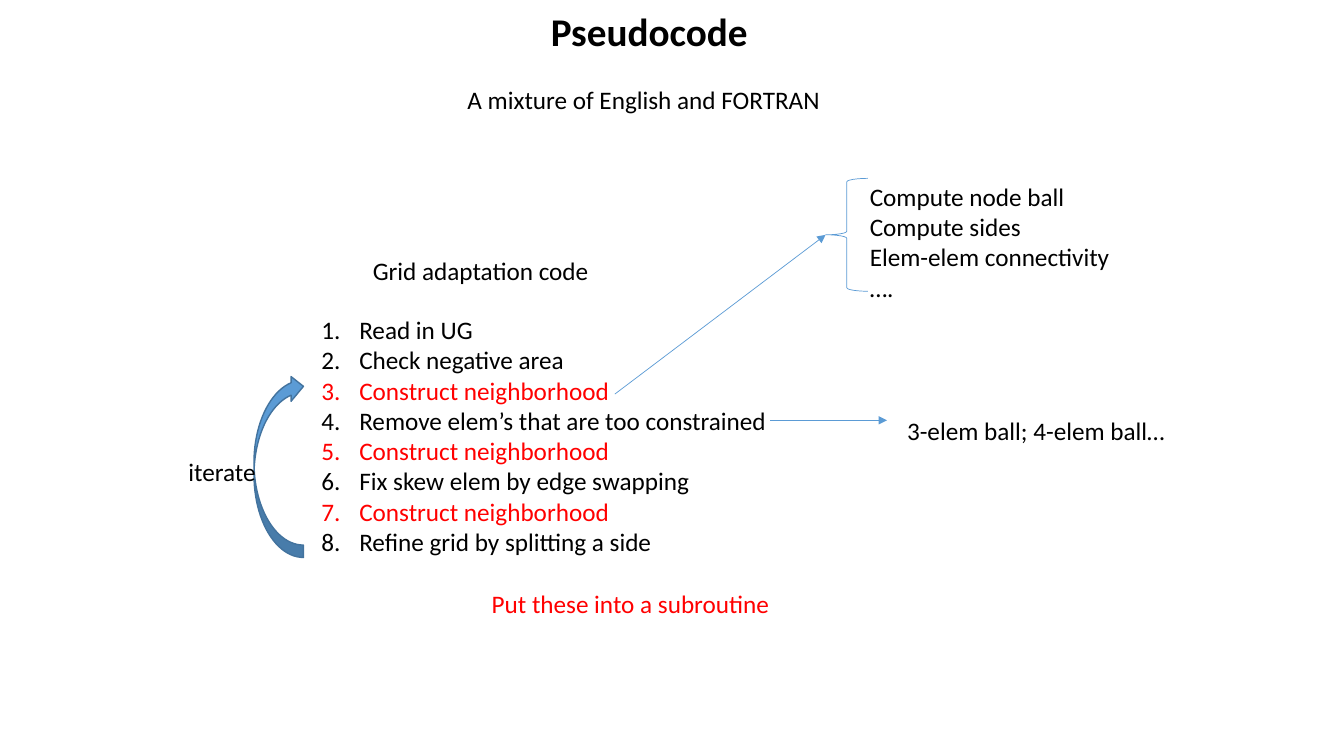
from pptx import Presentation
from pptx import util as u
from pptx.dml.color import RGBColor
from pptx.enum import shapes, text
from pptx.oxml.ns import qn
from lxml import etree

COLORS = {"text": "000000", "accent": "FF0000", "line": "5B9BD5", "edge": "43739E"}
FONT = "Calibri"
WIDTH, HEIGHT = u.Inches(13.333), u.Inches(7.5)
LINE = 5.33  # height of a one-line text box, percent of slide height
REPEATED_STEP = "Construct neighborhood"
STEPS = [
    "Read in UG",
    "Check negative area",
    REPEATED_STEP,
    "Remove elem’s that are too constrained",
    REPEATED_STEP,
    "Fix skew elem by edge swapping",
    REPEATED_STEP,
    "Refine grid by splitting a side",
]
DETAILS = ["Compute node ball", "Compute sides", "Elem-elem connectivity", "…."]


def place(*shares):
    """Turn alternating x and y percentages of the slide into lengths."""
    return [round(share / 100 * (HEIGHT if index % 2 else WIDTH))
            for index, share in enumerate(shares)]


def color(name):
    return RGBColor.from_string(COLORS[name])


def add_text(slide, box, lines, color_name="text", size=18):
    shape = slide.shapes.add_textbox(*place(*box))
    frame = shape.text_frame
    frame.word_wrap = False
    frame.text = "\n".join(lines)
    for paragraph in frame.paragraphs:
        paragraph.font.name = FONT
        paragraph.font.size = u.Pt(size)
        paragraph.font.color.rgb = color(color_name)
    return shape


def add_title(slide, box, title):
    shape = add_text(slide, box, [title], size=28)
    shape.text_frame.word_wrap = True
    shape.text_frame.vertical_anchor = text.MSO_ANCHOR.MIDDLE
    paragraph = shape.text_frame.paragraphs[0]
    paragraph.alignment = text.PP_ALIGN.CENTER
    paragraph.line_spacing = 0.9
    paragraph.font.bold = True


def add_numbered_list(slide, box, steps):
    shape = add_text(slide, box, steps)
    indent = u.Inches(0.375)
    for paragraph in shape.text_frame.paragraphs:
        if paragraph.text == REPEATED_STEP:
            paragraph.font.color.rgb = color("accent")
        properties = paragraph._p.get_or_add_pPr()
        properties.set("marL", str(indent))
        properties.set("indent", str(-indent))
        numbering = etree.Element(qn("a:buAutoNum"), type="arabicPeriod")
        properties.insert_element_before(
            numbering, "a:tabLst", "a:defRPr", "a:extLst")


def add_outline(slide, kind, box, line, width, fill=None):
    shape = slide.shapes.add_shape(kind, *place(*box))
    shape.shadow.inherit = False
    shape.line.color.rgb = color(line)
    shape.line.width = u.Pt(width)
    if fill:
        shape.fill.solid()
        shape.fill.fore_color.rgb = color(fill)
    else:
        shape.fill.background()
    return shape


def add_arrow(slide, start, end):
    arrow = slide.shapes.add_connector(
        shapes.MSO_CONNECTOR.STRAIGHT, *place(*start, *end))
    arrow.line.color.rgb = color("line")
    arrow.line.width = u.Pt(0.5)
    etree.SubElement(arrow.line._get_or_add_ln(), qn("a:tailEnd"), type="triangle")
    etree.SubElement(arrow._element.spPr, qn("a:effectLst"))
    return arrow


def main():
    presentation = Presentation()
    presentation.slide_width, presentation.slide_height = WIDTH, HEIGHT
    slide = presentation.slides.add_slide(presentation.slide_layouts[6])

    # Headings
    add_title(slide, (36.53, 0.8, 23.55, 7.47), "Pseudocode")
    add_text(slide, (34.05, 10.53, 28.43, LINE), ["A mixture of English and FORTRAN"])
    add_text(slide, (27, 33.07, 17.78, LINE), ["Grid adaptation code"])

    # Algorithm steps and the note on the repeated one
    add_numbered_list(slide, (23.18, 40.93, 35.4, 33.6), STEPS)
    add_text(slide, (35.85, 77.2, 22.43, LINE), ["Put these into a subroutine"], "accent")

    # Details of the neighborhood step
    add_text(slide, (63.98, 23.33, 19.58, 17.47), DETAILS)
    brace = add_outline(slide, shapes.MSO_SHAPE.LEFT_BRACE,
                        (61.43, 23.6, 3.15, 14.93), "line", 0.5)
    arrow = add_arrow(slide, (45.75, 52.13), (61.43, 31.07))
    arrow.end_connect(brace, 1)

    # Details of the removal step
    add_arrow(slide, (57.3, 55.6), (66, 55.6))
    add_text(slide, (66.75, 54.27, 21.08, LINE), ["3-elem ball; 4-elem ball…"])

    # Iteration loop
    loop = add_outline(slide, shapes.MSO_SHAPE.CURVED_RIGHT_ARROW,
                       (18.9, 49.47, 3.68, 24.27), "edge", 1, "line")
    loop._element.spPr.get_or_add_xfrm().set("flipV", "1")
    add_text(slide, (13.28, 59.73, 6.6, LINE), ["iterate"])

    presentation.save("out.pptx")


if __name__ == "__main__":
    main()
